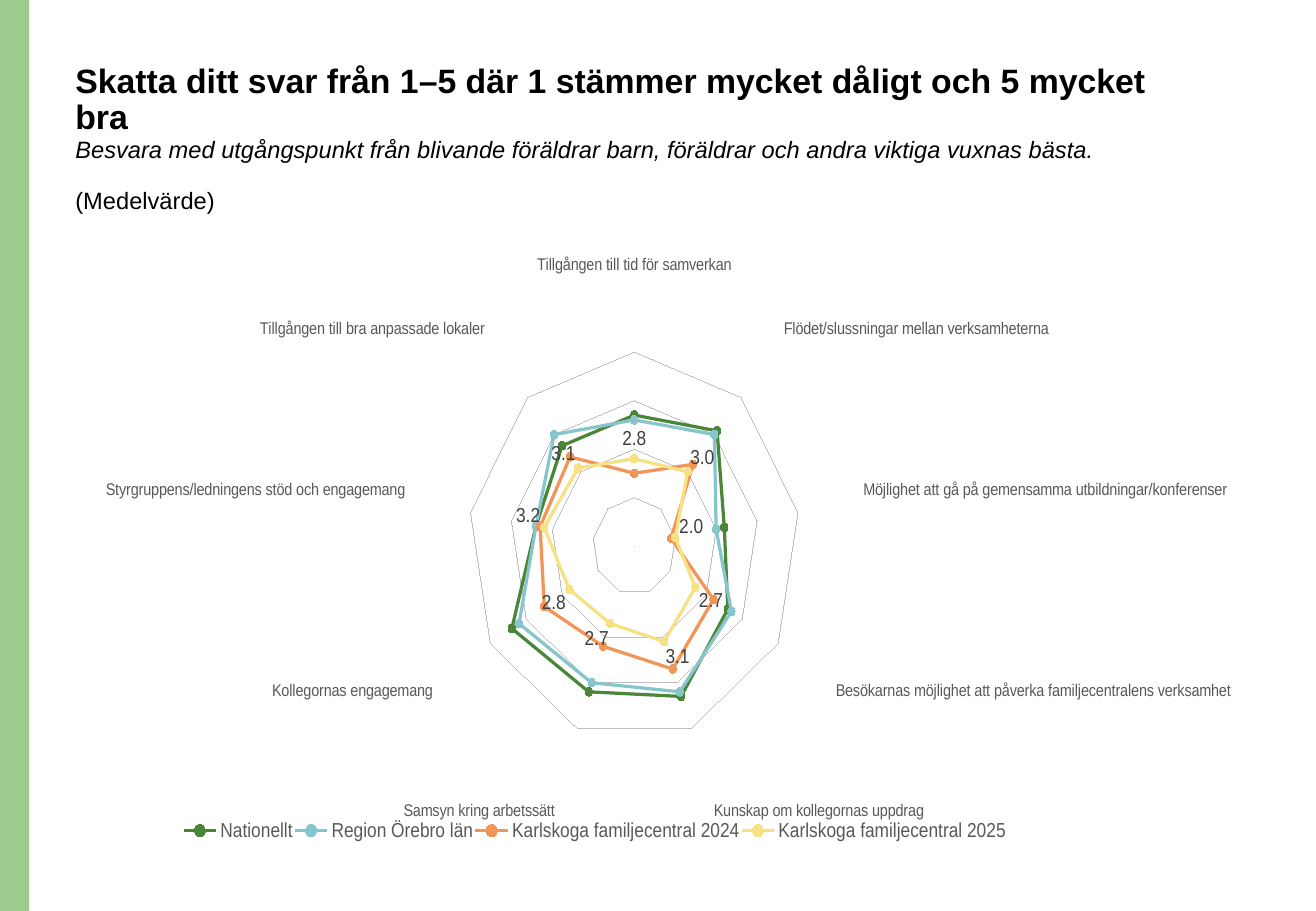
from dataclasses import dataclass

from lxml import etree
from pptx import Presentation
from pptx import util as u
from pptx.chart import data as chart_data
from pptx.dml import color
from pptx.enum import chart as ch, shapes, text

COLOURS = {
    "bar": "9DCC8F",
    "heading": "000000",
    "axis_text": "595959",
    "label_text": "404040",
    "spoke": "D9D9D9",
    "ring": "BFBFBF",
    "national": "4B8638",
    "region": "85C5CB",
    "centre_2024": "F29559",
    "centre_2025": "F6E183",
}
FONT = "Arial"
PLOT_LAYOUT = {
    "layoutTarget": "inner", "xMode": "edge", "yMode": "edge",
    "x": 0.296, "y": 0.104, "w": 0.419, "h": 0.812,
}
LEGEND_LAYOUT = {"xMode": "edge", "yMode": "edge", "x": 0.04, "y": 0.94, "w": 0.85, "h": 0.05}


@dataclass(frozen=True)
class HeadingPart:
    wording: str
    size: float
    bold: bool = False
    italic: bool = False
    gap: float = 0


@dataclass(frozen=True)
class Respondents:
    name: str
    means: tuple[float, ...]
    colour: str
    labelled: bool = False


HEADING = (
    HeadingPart("Skatta ditt svar från 1–5 där 1 stämmer mycket dåligt och 5 mycket bra", 20, bold=True),
    HeadingPart(
        "Besvara med utgångspunkt från blivande föräldrar barn, föräldrar och andra viktiga vuxnas bästa.",
        14,
        italic=True,
        gap=0.5,
    ),
    HeadingPart("(Medelvärde)", 14, gap=15),
)
STATEMENTS = (
    "Tillgången till tid för samverkan",
    "Tillgången till bra anpassade lokaler",
    "Styrgruppens/ledningens stöd och engagemang",
    "Kollegornas engagemang",
    "Samsyn kring arbetssätt",
    "Kunskap om kollegornas uppdrag",
    "Besökarnas möjlighet att påverka familjecentralens verksamhet",
    "Möjlighet att gå på gemensamma utbildningar/konferenser",
    "Flödet/slussningar mellan verksamheterna",
)
GROUPS = (
    Respondents("Nationellt", (3.7, 3.7, 3.4, 4.4, 4.2, 4.3, 3.6, 3.2, 4.1), "national"),
    Respondents("Region Örebro län", (3.6, 4, 3.4, 4.2, 4, 4.2, 3.7, 3, 4), "region"),
    Respondents("Karlskoga familjecentral 2024", (2.5, 3.4, 3.3, 3.5, 3.2, 3.7, 3.2, 1.9, 3.2), "centre_2024"),
    Respondents("Karlskoga familjecentral 2025", (2.8, 3.1, 3.2, 2.8, 2.7, 3.1, 2.7, 2, 3), "centre_2025", True),
)


def rgb(key: str) -> color.RGBColor:
    """Return the named colour."""
    return color.RGBColor.from_string(COLOURS[key])


def style_font(font, size: float, key: str) -> None:
    """Set typeface, size and colour."""
    font.name = FONT
    font.size = u.Pt(size)
    font.color.rgb = rgb(key)


def style_line(line, key: str, width: float) -> None:
    """Set line colour and width in points."""
    line.color.rgb = rgb(key)
    line.width = u.Pt(width)


def draw_side_bar(slide) -> None:
    """Draw the green band along the left edge."""
    bar = slide.shapes.add_shape(
        shapes.MSO_SHAPE.RECTANGLE, 0, 0, u.Inches(0.24), u.Inches(7.5)
    )
    bar.shadow.inherit = False
    bar.fill.solid()
    bar.fill.fore_color.rgb = rgb("bar")
    bar.line.fill.background()


def write_heading(slide) -> None:
    """Fill the title placeholder with the question and its notes."""
    heading = slide.shapes.title
    heading.left, heading.top = u.Inches(0.52), u.Inches(0.48)
    heading.width, heading.height = u.Inches(9.34), u.Inches(1.08)
    frame = heading.text_frame
    frame.word_wrap = True
    frame.auto_size = text.MSO_AUTO_SIZE.NONE
    frame.vertical_anchor = text.MSO_ANCHOR.TOP
    for index, part in enumerate(HEADING):
        paragraph = frame.add_paragraph() if index else frame.paragraphs[0]
        paragraph.alignment = text.PP_ALIGN.LEFT
        paragraph.line_spacing = 0.9
        paragraph.space_before = u.Pt(part.gap)
        run = paragraph.add_run()
        run.text = part.wording
        style_font(run.font, part.size, "heading")
        run.font.bold = part.bold
        run.font.italic = part.italic


def place(element, settings: dict[str, object], position: int) -> None:
    """Give a chart element a manual layout as fractions of the chart."""
    namespace = etree.QName(element).namespace
    for automatic in element.xpath("c:layout"):
        element.remove(automatic)
    layout = etree.Element(f"{{{namespace}}}layout")
    manual = etree.SubElement(layout, f"{{{namespace}}}manualLayout")
    for tag, value in settings.items():
        etree.SubElement(manual, f"{{{namespace}}}{tag}").set("val", str(value))
    element.insert(position, layout)


def style_legend(radar) -> None:
    """Show the groups in one row under the chart."""
    radar.has_legend = True
    radar.legend.position = ch.XL_LEGEND_POSITION.BOTTOM
    radar.legend.include_in_layout = False
    style_font(radar.legend.font, 12, "axis_text")
    place(radar.element.xpath("c:chart/c:legend")[0], LEGEND_LAYOUT, 1)


def style_axes(radar) -> None:
    """Format the statement labels, spokes and rings."""
    statements = radar.category_axis
    statements.reverse_order = True
    statements.major_tick_mark = ch.XL_TICK_MARK.NONE
    style_font(statements.tick_labels.font, 10, "axis_text")
    style_line(statements.format.line, "heading", 0.75)
    statements.has_major_gridlines = True
    style_line(statements.major_gridlines.format.line, "spoke", 0.75)
    scale = radar.value_axis
    scale.minimum_scale, scale.maximum_scale, scale.major_unit = 1, 5.9, 1
    scale.has_major_gridlines = True
    style_line(scale.major_gridlines.format.line, "ring", 0.01)
    scale.visible = False


def style_group(series, group: Respondents) -> None:
    """Format one respondent group's line, markers and labels."""
    series.smooth = False
    style_line(series.format.line, group.colour, 2.25)
    series.marker.style = ch.XL_MARKER_STYLE.CIRCLE
    series.marker.size = 5
    series.marker.format.fill.solid()
    series.marker.format.fill.fore_color.rgb = rgb(group.colour)
    style_line(series.marker.format.line, group.colour, 0.75)
    if group.labelled:
        labels = series.data_labels
        labels.show_value = True
        labels.number_format = "#,##0.0"
        labels.number_format_is_linked = False
        style_font(labels.font, 12, "label_text")


def draw_radar(slide) -> None:
    """Draw the radar chart of mean scores."""
    scores = chart_data.CategoryChartData(number_format="0.0")
    scores.categories = STATEMENTS
    for group in GROUPS:
        scores.add_series(group.name, group.means)
    radar = slide.shapes.add_chart(
        ch.XL_CHART_TYPE.RADAR_MARKERS,
        u.Inches(0.87), u.Inches(1.87), u.Inches(9.34), u.Inches(5.15),
        scores,
    ).chart
    radar.has_title = False
    style_font(radar.font, 10, "heading")
    radar.plots[0].vary_by_categories = False
    place(radar.element.xpath("c:chart/c:plotArea")[0], PLOT_LAYOUT, 0)
    style_legend(radar)
    style_axes(radar)
    for series, group in zip(radar.plots[0].series, GROUPS):
        style_group(series, group)


def main() -> None:
    """Build and save the slide."""
    deck = Presentation()
    deck.slide_width, deck.slide_height = u.Inches(10.83), u.Inches(7.5)
    slide = deck.slides.add_slide(deck.slide_layouts[5])
    draw_side_bar(slide)
    write_heading(slide)
    draw_radar(slide)
    deck.save("out.pptx")


if __name__ == "__main__":
    main()
